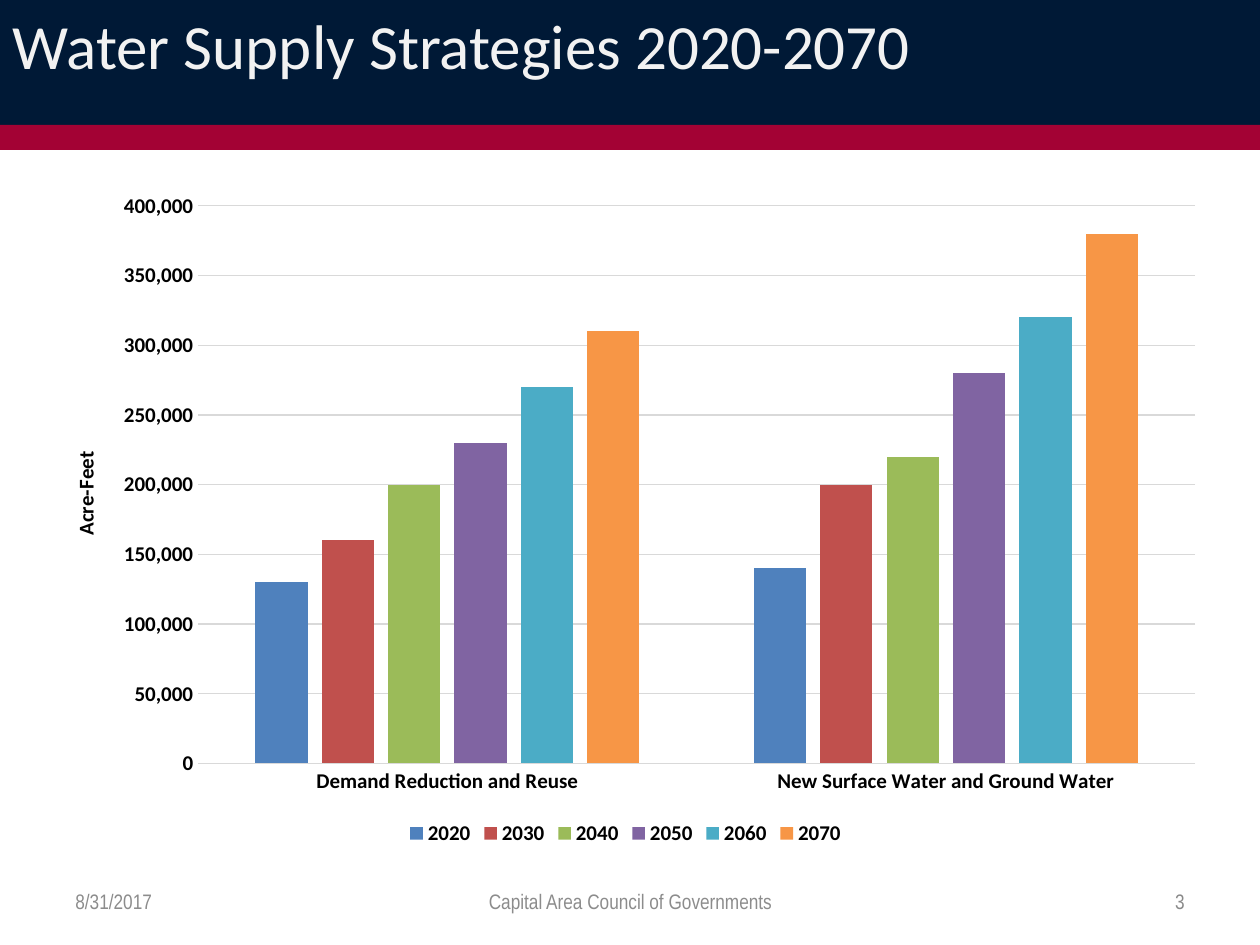
from lxml import etree
from pptx import Presentation
from pptx.chart.data import CategoryChartData
from pptx.dml.color import RGBColor
from pptx.enum.chart import XL_CHART_TYPE, XL_LEGEND_POSITION, XL_TICK_MARK
from pptx.enum.shapes import MSO_SHAPE
from pptx.enum.text import MSO_ANCHOR, PP_ALIGN
from pptx.oxml.ns import qn
from pptx.util import Pt

COLUMNS = XL_CHART_TYPE.COLUMN_CLUSTERED
BOTTOM = XL_LEGEND_POSITION.BOTTOM
NO_TICK = XL_TICK_MARK.NONE
TOP, MIDDLE = MSO_ANCHOR.TOP, MSO_ANCHOR.MIDDLE
LEFT, CENTER, RIGHT = PP_ALIGN.LEFT, PP_ALIGN.CENTER, PP_ALIGN.RIGHT

COLORS = {
    "navy": "001936", "red": "A30234", "title": "F2F2F2", "text": "000000",
    "grid": "D9D9D9", "footer": "8C8C8C", "number": "898989",
}
TITLE = "Water Supply Strategies 2020-2070"
BANDS = [("navy", 0, 126), ("red", 125, 25)]
CATEGORIES = ["Demand Reduction and Reuse", "New Surface Water and Ground Water"]
SERIES = [
    ("2020", (130000, 140000), "4F81BD"),
    ("2030", (160000, 200000), "C0504D"),
    ("2040", (200000, 220000), "9BBB59"),
    ("2050", (230000, 280000), "8064A2"),
    ("2060", (270000, 320000), "4BACC6"),
    ("2070", (310000, 380000), "F79646"),
]
FOOTERS = [
    ("8/31/2017", 63, 294, LEFT, "footer"),
    ("Capital Area Council of Governments", 431, 399, CENTER, "footer"),
    ("3", 903, 294, RIGHT, "number"),
]
WIDTH, HEIGHT = 1260, 945


def px(n):
    return round(n * 914400 / 126)


def box(*lengths):
    return [px(n) for n in lengths]


def rgb(name):
    return RGBColor.from_string(COLORS[name])


def style(font, size, color, name="Calibri", bold=False):
    font.size, font.name, font.bold = Pt(size), name, bold
    font.color.rgb = rgb(color)


def place(parent, index, **fractions):
    for old in parent.findall(qn("c:layout")):
        parent.remove(old)
    layout = etree.Element(qn("c:layout"))
    manual = etree.SubElement(layout, qn("c:manualLayout"))
    if "w" in fractions:
        etree.SubElement(manual, qn("c:layoutTarget")).set("val", "inner")
    for key in ("xMode", "yMode"):
        etree.SubElement(manual, qn("c:" + key)).set("val", "edge")
    for key, value in fractions.items():
        etree.SubElement(manual, qn("c:" + key)).set("val", str(value))
    parent.insert(index, layout)


def add_bands(s):
    for color, top, height in BANDS:
        sp = s.shapes.add_shape(MSO_SHAPE.RECTANGLE, *box(0, top, WIDTH, height))
        sp.shadow.inherit = False
        sp.fill.solid()
        sp.fill.fore_color.rgb = rgb(color)
        sp.line.fill.background()


def add_title(s):
    sp = s.shapes.title
    sp.left, sp.top, sp.width, sp.height = box(0, 0, 1071, 126)
    tf = sp.text_frame
    tf.text = TITLE
    tf.vertical_anchor = TOP
    p = tf.paragraphs[0]
    p.alignment = LEFT
    style(p.runs[0].font, 36, "title")
    s.shapes._spTree.append(sp._element)


def add_chart(s):
    data = CategoryChartData(number_format="#,##0")
    data.categories = CATEGORIES
    for name, values, _ in SERIES:
        data.add_series(name, values)
    chart = s.shapes.add_chart(COLUMNS, *box(32, 179, 1187, 672), data).chart
    style(chart.font, 10, "text")
    chart.has_title = False
    chart.has_legend = True
    chart.legend.position = BOTTOM
    chart.legend.include_in_layout = False
    style(chart.legend.font, 12, "text", bold=True)

    plot = chart.plots[0]
    plot.gap_width, plot.overlap, plot.vary_by_categories = 219, -27, False
    for series, (_, _, color) in zip(plot.series, SERIES):
        series.format.fill.solid()
        series.format.fill.fore_color.rgb = RGBColor.from_string(color)
        series.invert_if_negative = False

    cat, val = chart.category_axis, chart.value_axis
    for axis in (cat, val):
        axis.major_tick_mark = axis.minor_tick_mark = NO_TICK
        style(axis.tick_labels.font, 12, "text", bold=True)
    val.minimum_scale, val.maximum_scale, val.major_unit = 0, 400000, 50000
    val.tick_labels.number_format = "#,##0"
    val.tick_labels.number_format_is_linked = False
    val.has_major_gridlines = True
    val.format.line.fill.background()
    for line in (cat.format.line, val.major_gridlines.format.line):
        line.color.rgb = rgb("grid")
        line.width = Pt(0.75)

    title = val.axis_title
    title.text_frame.text = "Acre-Feet"
    style(title.text_frame.paragraphs[0].runs[0].font, 12, "text", bold=True)
    body = title.text_frame._txBody.find(qn("a:bodyPr"))
    body.set("rot", "-5400000")
    body.set("vert", "horz")
    place(title._element, 1, x=0.03, y=0.4)
    place(chart._chartSpace.chart.plotArea, 0, x=0.14, y=0.04, w=0.84, h=0.83)


def add_footers(s):
    for text, left, width, align, color in FOOTERS:
        tf = s.shapes.add_textbox(*box(left, 876, width, 50)).text_frame
        tf.word_wrap = True
        tf.vertical_anchor = MIDDLE
        tf.text = text
        p = tf.paragraphs[0]
        p.alignment = align
        style(p.runs[0].font, 12, color, "Arial Narrow")


def main():
    prs = Presentation()
    prs.slide_width, prs.slide_height = box(WIDTH, HEIGHT)
    s = prs.slides.add_slide(prs.slide_layouts[5])
    add_bands(s)
    add_title(s)
    add_chart(s)
    add_footers(s)
    prs.save("out.pptx")


if __name__ == "__main__":
    main()
